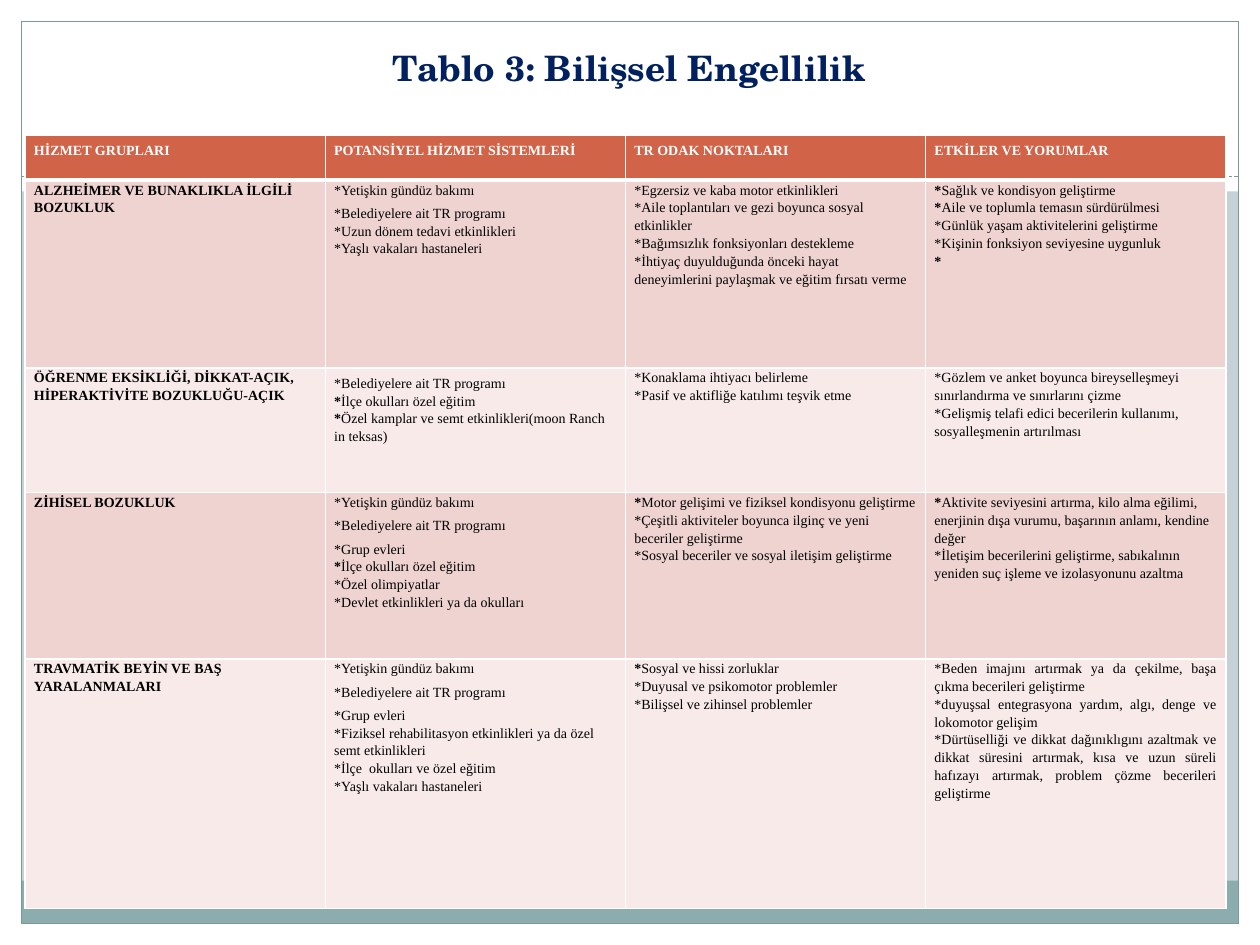
from lxml.etree import SubElement
from pptx import Presentation
from pptx.dml.color import RGBColor
from pptx.enum.dml import MSO_LINE
from pptx.enum.shapes import MSO_CONNECTOR, MSO_SHAPE
from pptx.enum.text import MSO_ANCHOR, PP_ALIGN
from pptx.oxml.ns import qn
from pptx.util import Inches, Pt

WHITE, TEAL, EDGE = "FFFFFF", "8CADAE", "7C999A"
HEADER, BANDS = "D16349", ("EED3D0", "F7EAE9")
BODY_FONT, TITLE_FONT = "Times New Roman", "TeX Gyre Schola"

DAY_CARE = "*Yetişkin gündüz bakımı"
TOWN = "*Belediyelere ait TR programı"
HOMES = "*Grup evleri"
HOSPITALS = "*Yaşlı vakaları hastaneleri"
SCHOOLS = ("*", "İlçe okulları özel eğitim")
WIDE_LINES = (TOWN, HOMES)

HEADINGS = ["HİZMET GRUPLARI", "POTANSİYEL HİZMET SİSTEMLERİ",
            "TR ODAK NOKTALARI", "ETKİLER VE YORUMLAR"]

# Each tuple is a bold mark followed by regular text.
GROUPS = [
    [["ALZHEİMER VE BUNAKLIKLA İLGİLİ BOZUKLUK"],
     [DAY_CARE, TOWN, "*Uzun dönem tedavi etkinlikleri", HOSPITALS],
     ["*Egzersiz ve kaba motor etkinlikleri",
      "*Aile toplantıları ve gezi boyunca sosyal etkinlikler",
      "*Bağımsızlık fonksiyonları destekleme",
      "*İhtiyaç duyulduğunda önceki hayat deneyimlerini paylaşmak ve eğitim fırsatı verme"],
     [("*", "Sağlık ve kondisyon geliştirme"),
      ("*", "Aile ve toplumla temasın sürdürülmesi"),
      "*Günlük yaşam aktivitelerini geliştirme",
      "*Kişinin fonksiyon seviyesine uygunluk", ("*",)]],
    [["ÖĞRENME EKSİKLİĞİ, DİKKAT-AÇIK, HİPERAKTİVİTE BOZUKLUĞU-AÇIK"],
     [TOWN, SCHOOLS,
      ("*", "Özel kamplar ve semt etkinlikleri(moon Ranch in teksas)")],
     ["*Konaklama ihtiyacı belirleme",
      "*Pasif ve aktifliğe katılımı teşvik etme"],
     ["*Gözlem ve anket boyunca bireyselleşmeyi sınırlandırma ve sınırlarını çizme",
      "*Gelişmiş telafi edici becerilerin kullanımı, sosyalleşmenin artırılması"]],
    [["ZİHİSEL BOZUKLUK"],
     [DAY_CARE, TOWN, HOMES, SCHOOLS, "*Özel olimpiyatlar",
      "*Devlet etkinlikleri ya da okulları"],
     [("*", "Motor gelişimi ve fiziksel kondisyonu geliştirme"),
      "*Çeşitli aktiviteler boyunca ilginç ve yeni beceriler geliştirme",
      "*Sosyal beceriler ve sosyal iletişim geliştirme"],
     [("*", "Aktivite seviyesini artırma, kilo alma eğilimi, enerjinin dışa vurumu, "
            "başarının anlamı, kendine değer"),
      "*İletişim becerilerini geliştirme, sabıkalının yeniden suç işleme ve "
      "izolasyonunu azaltma"]],
    [["TRAVMATİK BEYİN VE BAŞ YARALANMALARI"],
     [DAY_CARE, TOWN, HOMES,
      "*Fiziksel rehabilitasyon etkinlikleri ya da özel semt etkinlikleri",
      "*İlçe  okulları ve özel eğitim", HOSPITALS],
     [("*", "Sosyal ve hissi zorluklar"), "*Duyusal ve psikomotor problemler",
      "*Bilişsel ve zihinsel problemler"],
     ["*Beden imajını artırmak ya da çekilme, başa çıkma becerileri geliştirme",
      "*duyuşsal entegrasyona yardım, algı, denge ve lokomotor gelişim",
      "*Dürtüselliği ve dikkat dağınıklıgını azaltmak ve dikkat süresini artırmak, "
      "kısa ve uzun süreli hafızayı artırmak, problem çözme becerileri geliştirme"]],
]


def paint(target, color):
    target.solid()
    target.fore_color.rgb = RGBColor.from_string(color)


def add_span(para, text, size, font, color, bold):
    span = para.add_run()
    span.text = text
    span.font.size, span.font.name, span.font.bold = Pt(size), font, bold
    span.font.color.rgb = RGBColor.from_string(color)


def add_panel(page, box, fill=None, edge_width=0, kind=MSO_SHAPE.RECTANGLE):
    panel = page.shapes.add_shape(kind, *map(Inches, box))
    panel.shadow.inherit = False
    if fill:
        paint(panel.fill, fill)
    else:
        panel.fill.background()
    if edge_width:
        paint(panel.line.fill, EDGE)
        panel.line.width = Pt(edge_width)
    else:
        panel.line.fill.background()


def add_frame(page, box):
    left, top, width, height = box
    margin = 0.17
    right, bottom = left + width, top + height
    for strip in ((left, bottom - margin, width, margin),
                  (left, top, width, 1.52),
                  (left, top, margin, height),
                  (right - margin, top, margin, height)):
        add_panel(page, strip, WHITE)
    inner_width = width - 2 * margin
    add_panel(page, (left + margin, bottom - 0.51, inner_width, 0.34), TEAL)
    add_panel(page, (left + margin, top + margin, inner_width, height - 2 * margin),
              edge_width=0.75)
    rule = page.shapes.add_connector(
        MSO_CONNECTOR.STRAIGHT, Inches(left + margin), Inches(top + 1.4),
        Inches(right - margin), Inches(top + 1.4))
    paint(rule.line.fill, EDGE)
    rule.line.width = Pt(0.75)
    rule.line.dash_style = MSO_LINE.SQUARE_DOT
    SubElement(rule._element.spPr, qn("a:effectLst"))
    for size, edge_width in ((0.67, 0), (0.46, 4)):
        add_panel(page, (left + (width - size) / 2, top + 1.38 - size / 2, size, size),
                  WHITE, edge_width, MSO_SHAPE.OVAL)


def add_title(page, box):
    title = page.shapes.title
    page.shapes._spTree.append(title._element)
    title.left, title.top, title.width, title.height = map(Inches, box)
    frame = title.text_frame
    frame.word_wrap = True
    frame.vertical_anchor = MSO_ANCHOR.BOTTOM
    frame.margin_bottom = Inches(0.38)
    para = frame.paragraphs[0]
    para.alignment = PP_ALIGN.CENTER
    add_span(para, "Tablo 3: Bilişsel Engellilik", 20, TITLE_FONT, "002060", True)


def add_borders(cell, top, bottom):
    properties = cell._tc.get_or_add_tcPr()
    for side, width in (("L", 1), ("R", 1), ("T", top), ("B", bottom)):
        edge = SubElement(properties, qn(f"a:ln{side}"), w=str(Pt(width)))
        fill = SubElement(edge, qn("a:solidFill"))
        SubElement(fill, qn("a:srgbClr"), val=WHITE)


def fill_cell(cell, lines, row, column):
    is_header = row == 0
    add_borders(cell, 3 if row == 1 else 1, 3 if is_header else 1)
    paint(cell.fill, HEADER if is_header else BANDS[(row - 1) % 2])
    cell.margin_left = cell.margin_right = Inches(0.07)
    cell.margin_top = cell.margin_bottom = 0
    frame = cell.text_frame
    for index, line in enumerate(lines):
        para = frame.add_paragraph() if index else frame.paragraphs[0]
        para.line_spacing = 1.5 if is_header or line in WIDE_LINES else 1.15
        if (row, column) in ((0, 0), (4, 3)):
            para.alignment = PP_ALIGN.JUSTIFY
        marked = isinstance(line, tuple)
        for part, text in enumerate(line if marked else (line,)):
            bold = is_header or column == 0 or (marked and part == 0)
            add_span(para, text, 8, BODY_FONT, WHITE if is_header else "000000", bold)


def add_service_table(page, box):
    rows = [[[heading] for heading in HEADINGS]] + GROUPS
    table = page.shapes.add_table(len(rows), len(HEADINGS), *map(Inches, box)).table
    for column in table.columns:
        column.width = Inches(box[2] / len(HEADINGS))
    for row, height in zip(table.rows, (0.36, 1.49, 0.99, 1.32, 1.98)):
        row.height = Inches(height)
    for row, cells in enumerate(rows):
        for column, lines in enumerate(cells):
            fill_cell(table.cell(row, column), lines, row, column)


def main():
    deck = Presentation()
    deck.slide_width, deck.slide_height = Inches(10), Inches(7.5)
    page = deck.slides.add_slide(deck.slide_layouts[5])
    paint(page.background.fill, "C5D1D7")
    add_frame(page, (0, 0, 10, 7.5))
    add_title(page, (0.33, 0.25, 9.33, 0.83))
    add_service_table(page, (0.2, 1.07, 9.53, 6.14))
    deck.save("out.pptx")


if __name__ == "__main__":
    main()
